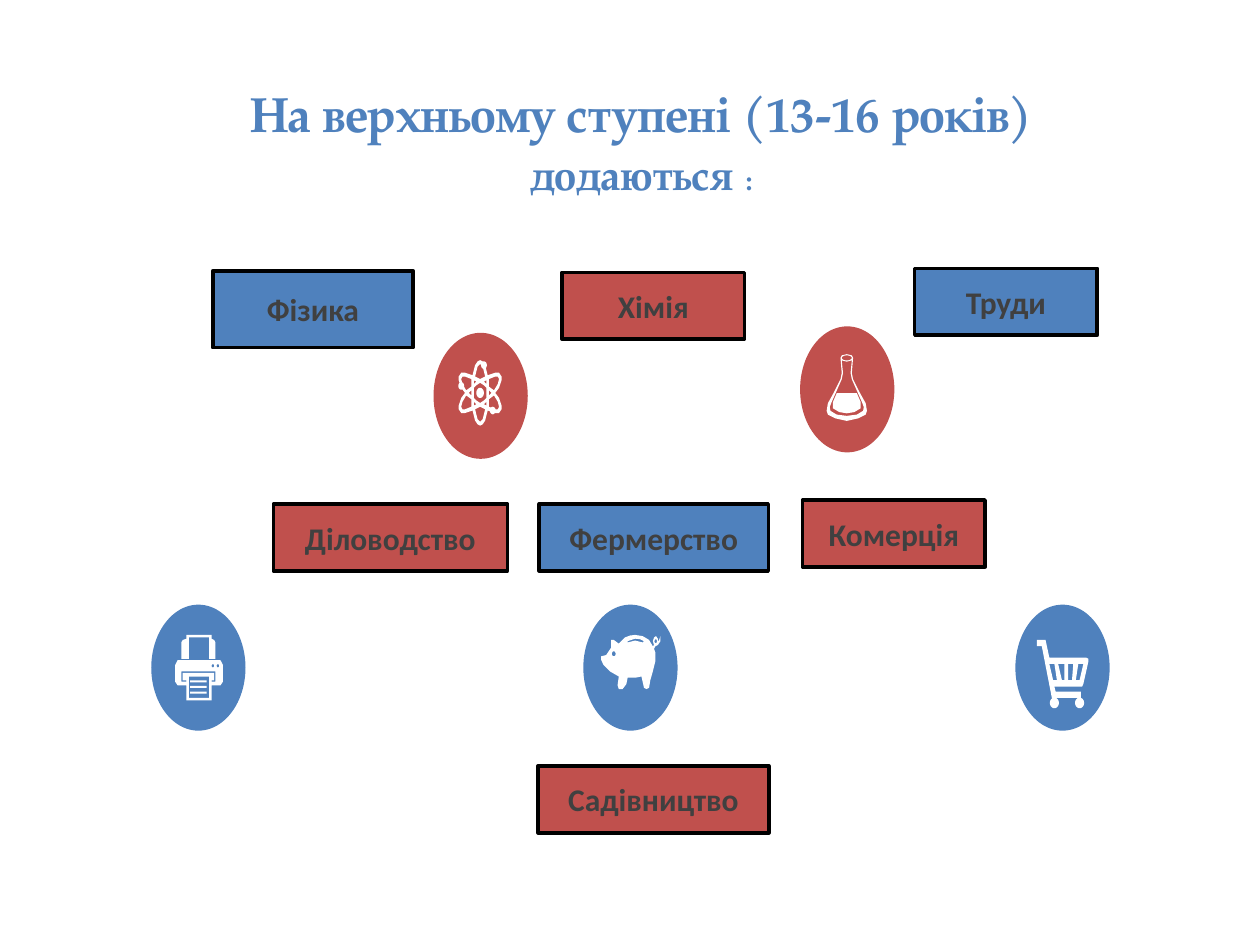
import math

import pptx
import pptx.dml.color
import pptx.enum.shapes
import pptx.enum.text
import pptx.util

Cm = pptx.util.Cm
Pt = pptx.util.Pt
SHAPE = pptx.enum.shapes.MSO_SHAPE
ALIGN = pptx.enum.text.PP_ALIGN
ANCHOR = pptx.enum.text.MSO_ANCHOR

COLORS = {
    "blue": "4F81BD",
    "red": "C0504D",
    "text": "404040",
    "line": "000000",
    "icon": "FFFFFF",
}
UNIT = 0.0254  # icon grid step in cm

TITLE_RUNS = [
    ("На верхньому ступені (13-16 років) ", 28),
    ("додаються", 24),
    (" ", 28),
    (":", 16),
]

# Subject, left, top, width, height (cm), colour
SUBJECTS = [
    ("Фізика", 4.29, 5.46, 4.04, 1.55, "blue"),
    ("Хімія", 11.33, 5.49, 3.68, 1.35, "red"),
    ("Труди", 18.44, 5.41, 3.68, 1.35, "blue"),
    ("Діловодство", 5.51, 10.16, 4.72, 1.35, "red"),
    ("Фермерство", 10.87, 10.16, 4.62, 1.35, "blue"),
    ("Комерція", 16.18, 10.08, 3.68, 1.35, "red"),
    ("Садівництво", 10.85, 15.44, 4.65, 1.35, "red"),
]

# Left, top (cm), colour
BADGES = [(3.05 + 8.71 * i, 12.19, "blue") for i in range(3)]
BADGES += [(8.74, 6.71, "red"), (16.13, 6.58, "red")]


def rgb(name):
    return pptx.dml.color.RGBColor.from_string(COLORS[name])


def add_run(p, text, size, font, color):
    r = p.add_run()
    r.text = text
    r.font.size = Pt(size)
    r.font.name = font
    r.font.bold = True
    r.font.color.rgb = rgb(color)


def fill_plain(sp, color):
    sp.shadow.inherit = False
    sp.fill.solid()
    sp.fill.fore_color.rgb = rgb(color)
    sp.line.fill.background()


def add_title(s):
    sp = s.shapes.title
    sp.left, sp.top, sp.width, sp.height = Cm(3.86), Cm(0.69), Cm(18.14), Cm(4.34)
    tf = sp.text_frame
    tf.word_wrap = True
    tf.vertical_anchor = ANCHOR.MIDDLE
    p = tf.paragraphs[0]
    p.alignment = ALIGN.CENTER
    for text, size in TITLE_RUNS:
        add_run(p, text, size, "TeX Gyre Pagella", "blue")


def add_subject(s, text, left, top, width, height, color):
    sp = s.shapes.add_shape(SHAPE.RECTANGLE, Cm(left), Cm(top), Cm(width), Cm(height))
    fill_plain(sp, color)
    sp.line.color.rgb = rgb("line")
    sp.line.width = Pt(2)
    tf = sp.text_frame
    tf.word_wrap = True
    tf.vertical_anchor = ANCHOR.MIDDLE
    p = tf.paragraphs[0]
    p.alignment = ALIGN.CENTER
    add_run(p, text, 18, "Calibri", "text")


def add_badge(s, left, top, color):
    sp = s.shapes.add_shape(SHAPE.OVAL, Cm(left), Cm(top), Cm(1.9), Cm(2.54))
    fill_plain(sp, color)


# Outlines: lists of points in icon grid units
def box(left, top, right, bottom):
    return [(left, top), (right, top), (right, bottom), (left, bottom)]


def oval(cx, cy, rx, ry, steps=24):
    angles = [2 * math.pi * i / steps for i in range(steps)]
    return [(cx + rx * math.cos(a), cy + ry * math.sin(a)) for a in angles]


def flip(points, fx, fy):
    return [(x * fx, y * fy) for x, y in points]


def mirror(half):
    """Close a right half by its reflection in the vertical axis."""
    return half + flip(half, -1, 1)[::-1]


def mirror_both(quarter):
    """Close a top right quarter by reflection in both axes."""
    return mirror(quarter + flip(quarter, 1, -1)[::-1])


def four_ways(points):
    return [flip(points, fx, fy) for fx in (1, -1) for fy in (1, -1)]


def add_icon(s, left, top, outlines):
    """Draw all outlines as one shape; inner outlines become holes."""
    scaled = [[(Cm(x * UNIT), Cm(y * UNIT)) for x, y in o] for o in outlines]
    fb = s.shapes.build_freeform(*scaled[0][0])
    for i, points in enumerate(scaled):
        if i:
            fb.move_to(*points[0])
        fb.add_line_segments(points[1:], close=True)
    fill_plain(fb.convert_to_shape(Cm(left), Cm(top)), "icon")


def printer():
    tray = [(5, 29), (5, 37), (9, 37), (9, 36), (6, 36), (6, 30), (31, 30),
            (31, 36), (29, 36), (29, 37), (32, 37), (32, 29)]
    body = [(2, 20), (36, 20), (38, 24), (38, 37), (36, 40), (29, 40), (29, 52),
            (9, 52), (9, 40), (2, 40), (0, 37), (0, 24)]
    feeder = [(9, 0), (29, 0), (29, 3), (31, 4), (32, 6), (32, 19), (27, 19),
              (27, 2), (11, 2), (11, 19), (5, 19), (5, 6), (6, 4), (9, 3)]
    lines = [box(12, y, 25, y + 1.6) for y in (36, 40.5, 45)]
    lamps = [oval(x, 24.5, 1, 1.3) for x in (30, 34)]
    return [body, feeder, tray, box(11, 33, 27, 50)] + lines + lamps


def atom():
    outline = mirror_both([(0, -26), (2, -25), (4, -22), (6, -14), (12, -16), (15, -16),
                           (17, -13), (17, -10), (15, -4), (12, 0)])
    tip = mirror([(0, -23), (2, -21), (3, -17), (4, -13), (0, -11)])
    petal = [(11, 2), (7, 5), (7, 11), (12, 13), (14, 13), (15, 11), (14, 7)]
    core = mirror_both([(0, -8), (3, -6), (5, -4), (5, 0)])
    side = [(7, -2), (9, 0), (7, 2)]
    return ([outline, core, oval(0, 0, 3, 4), tip, flip(tip, 1, -1), side, flip(side, -1, 1)]
            + four_ways(petal) + four_ways([(5, -10), (3, -9), (5, -7)]))


def electrons():
    return [oval(x, y, 2.3, 3) for x, y in ((-15, -5.5), (3, -22), (10, 14))]


def flask():
    glass = mirror([(0, 0), (4, 1), (5, 3), (4, 15), (5, 20), (10, 30), (15, 39), (16, 45),
                    (15, 48), (9, 51), (0, 53)])
    inside = mirror([(0, 6), (4, 5), (3, 15), (4, 20), (12, 38), (13.5, 42), (13, 45),
                     (8, 48), (0, 49)])
    liquid = mirror([(8, 31), (11, 38), (11, 43), (6, 46), (0, 47)])
    return [glass, inside, liquid, oval(0, 3, 4, 2)]


def pig():
    body = [(27, 0), (33, 1), (38, 4), (41, 9), (42, 8), (41, 5), (42, 2), (43.5, 1), (45, 3),
            (45, 5.5), (46, 4), (47, 1), (47, 5), (45, 8), (43, 9), (42, 11), (43, 14),
            (43, 21), (41, 29), (39, 36), (38, 42), (36, 43), (34, 42), (32, 33), (27, 34),
            (21, 34), (20, 39), (17, 43), (14, 43), (13, 40), (14, 33), (7, 29), (2, 24),
            (0, 20), (0, 17), (4, 16), (8, 10), (8, 4), (10, 4), (14, 7), (19, 2), (23, 0.5)]
    slot = [(27, 3), (21, 5), (21, 6), (27, 4.5), (33, 6), (34, 5), (31, 3.5)]
    return [body, slot, oval(10, 15, 1.5, 2), oval(43.3, 5, 1, 1.5)]


def cart():
    frame = [(0, 0), (7, 0), (10, 14), (39, 14), (41, 15), (41, 17), (37, 35), (36, 37),
             (14, 37), (15, 41), (35, 41), (35, 46), (12, 46), (4, 5), (0, 5)]
    gaps = [[(10, 19), (13, 32), (16, 32), (14, 19)], [(17, 19), (20, 32), (22, 32), (22, 19)],
            [(25, 19), (25, 32), (28, 32), (29, 19)], [(33, 19), (31, 32), (34, 32), (37, 19)]]
    return [frame] + gaps + [oval(x, 50, 3.6, 4.2) for x in (14, 34)]


def main():
    prs = pptx.Presentation()
    prs.slide_width, prs.slide_height = Cm(25.4), Cm(19.05)
    s = prs.slides.add_slide(prs.slide_layouts[5])
    add_title(s)
    for badge in BADGES:
        add_badge(s, *badge)
    for subject in SUBJECTS:
        add_subject(s, *subject)
    # White icons on the badges
    add_icon(s, 3.53, 12.8, printer())
    add_icon(s, 9.68, 7.92, atom())
    add_icon(s, 9.68, 7.92, electrons())
    add_icon(s, 17.07, 7.14, flask())
    add_icon(s, 12.12, 12.8, pig())
    add_icon(s, 20.9, 12.9, cart())
    prs.save("out.pptx")


if __name__ == "__main__":
    main()
